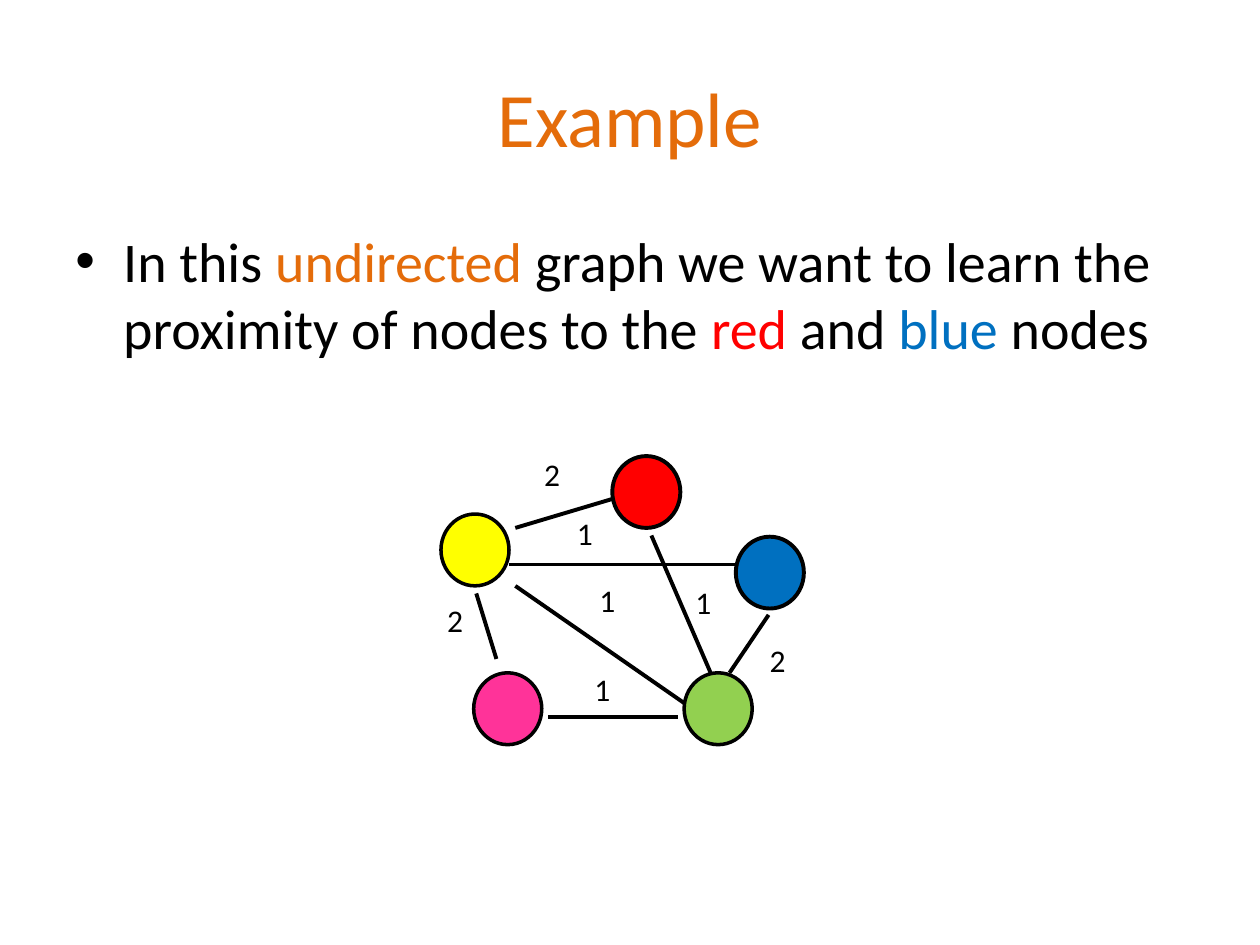
from dataclasses import dataclass

from lxml import etree
from pptx import Presentation
from pptx.dml.color import RGBColor
from pptx.enum.shapes import MSO_CONNECTOR as CONN, MSO_SHAPE as SHAPE
from pptx.enum.text import MSO_ANCHOR as ANCHOR, MSO_AUTO_SIZE as AUTO, PP_ALIGN as ALIGN
from pptx.oxml.ns import qn
from pptx.util import Inches, Pt


@dataclass(frozen=True)
class Theme:
    """Colours, font and sizes of the slide."""
    font: str = "Calibri"
    title: int = 44
    body: int = 32
    label: int = 18
    black: str = "000000"
    orange: str = "E46C0A"
    red: str = "FF0000"
    blue: str = "0070C0"
    green: str = "92D050"
    pink: str = "FF3399"
    yellow: str = "FFFF00"
    thick: float = 2.25
    thin: float = 2


T = Theme()
NODE_SIZE = (0.54, 0.57)
LABEL_SIZE = (0.34, 0.4)
NODES = [
    (1.41, 0.06, T.red, T.thick),
    (2.39, 0.70, T.blue, T.thick),
    (1.98, 1.78, T.green, T.thin),
    (0.31, 1.78, T.pink, T.thin),
    (0.05, 0.52, T.yellow, T.thin),
]
EDGES = [
    ((0.90, 2.13), (1.93, 2.13), "1", (1.17, 1.71)),
    ((0.49, 1.67), (0.33, 1.15), "2", (0.00, 1.16)),
    ((0.64, 0.63), (1.41, 0.40), "2", (0.77, 0.00)),
    ((0.59, 0.92), (2.39, 0.92), "1", (1.03, 0.47)),
    ((2.19, 1.78), (1.72, 0.69), "1", (1.97, 1.02)),
    ((2.34, 1.78), (2.65, 1.32), "2", (2.56, 1.48)),
    ((1.98, 2.02), (0.64, 1.09), "1", (1.21, 1.00)),
]
STATEMENT = [
    ("In this ", T.black),
    ("undirected", T.orange),
    (" graph we want to learn the proximity of nodes to the ", T.black),
    ("red", T.red),
    (" and ", T.black),
    ("blue", T.blue),
    (" nodes", T.black),
]


def set_attrs(obj, values):
    """Set each named attribute of an object."""
    for name, value in values.items():
        setattr(obj, name, value)


def add_text(shapes, box, runs, size, frame, align=ALIGN.LEFT):
    """Add a one-paragraph text box made of coloured runs."""
    tf = shapes.add_textbox(*map(Inches, box)).text_frame
    set_attrs(tf, frame)
    p = tf.paragraphs[0]
    p.alignment = align
    for text, color in runs:
        r = p.add_run()
        r.text = text
        set_attrs(r.font, {"name": T.font, "size": Pt(size)})
        r.font.color.rgb = RGBColor.from_string(color)
    return p


def add_title(slide, box):
    """Place the centred slide title."""
    frame = {"word_wrap": True, "vertical_anchor": ANCHOR.MIDDLE}
    add_text(slide.shapes, box, [("Example", T.orange)], T.title, frame, ALIGN.CENTER)


def add_statement(slide, box):
    """Place the bulleted statement."""
    p = add_text(slide.shapes, box, STATEMENT, T.body, {"word_wrap": True})
    p.space_before = Pt(0.2 * T.body)
    pPr = p._p.get_or_add_pPr()
    pPr.set("marL", str(Inches(0.38)))
    pPr.set("indent", str(-Inches(0.38)))
    etree.SubElement(pPr, qn("a:buFont"), typeface="Arial")
    etree.SubElement(pPr, qn("a:buChar"), char="•")


def set_line(sp, width):
    """Give a shape or connector a black line."""
    sp.line.color.rgb = RGBColor.from_string(T.black)
    sp.line.width = Pt(width)


def add_edge(shapes, start, end):
    """Draw one straight edge of the graph."""
    cxn = shapes.add_connector(CONN.STRAIGHT, *map(Inches, (*start, *end)))
    set_line(cxn, T.thick)
    etree.SubElement(cxn._element.spPr, qn("a:effectLst"))


def add_node(shapes, box, color, width):
    """Draw one round node of the graph."""
    sp = shapes.add_shape(SHAPE.OVAL, *map(Inches, box))
    sp.shadow.inherit = False
    sp.fill.solid()
    sp.fill.fore_color.rgb = RGBColor.from_string(color)
    set_line(sp, width)


def add_graph(slide, left, top):
    """Place the weighted graph as a group at the given corner."""
    shapes = slide.shapes.add_group_shape().shapes

    def at(point):
        return left + point[0], top + point[1]

    for start, end, _, _ in EDGES:
        add_edge(shapes, at(start), at(end))
    for x, y, color, width in NODES:
        add_node(shapes, (*at((x, y)), *NODE_SIZE), color, width)
    frame = {"word_wrap": False, "auto_size": AUTO.SHAPE_TO_FIT_TEXT}
    for _, _, weight, spot in EDGES:
        add_text(shapes, (*at(spot), *LABEL_SIZE), [(weight, T.black)], T.label, frame)


def main():
    """Build and save the slide."""
    prs = Presentation()
    set_attrs(prs, {"slide_width": Inches(10), "slide_height": Inches(7.5)})
    slide = prs.slides.add_slide(prs.slide_layouts[6])
    add_title(slide, (0.5, 0.3, 9, 1.25))
    add_statement(slide, (0.5, 1.75, 9, 4.95))
    add_graph(slide, 3.45, 3.56)
    prs.save("out.pptx")


if __name__ == "__main__":
    main()
